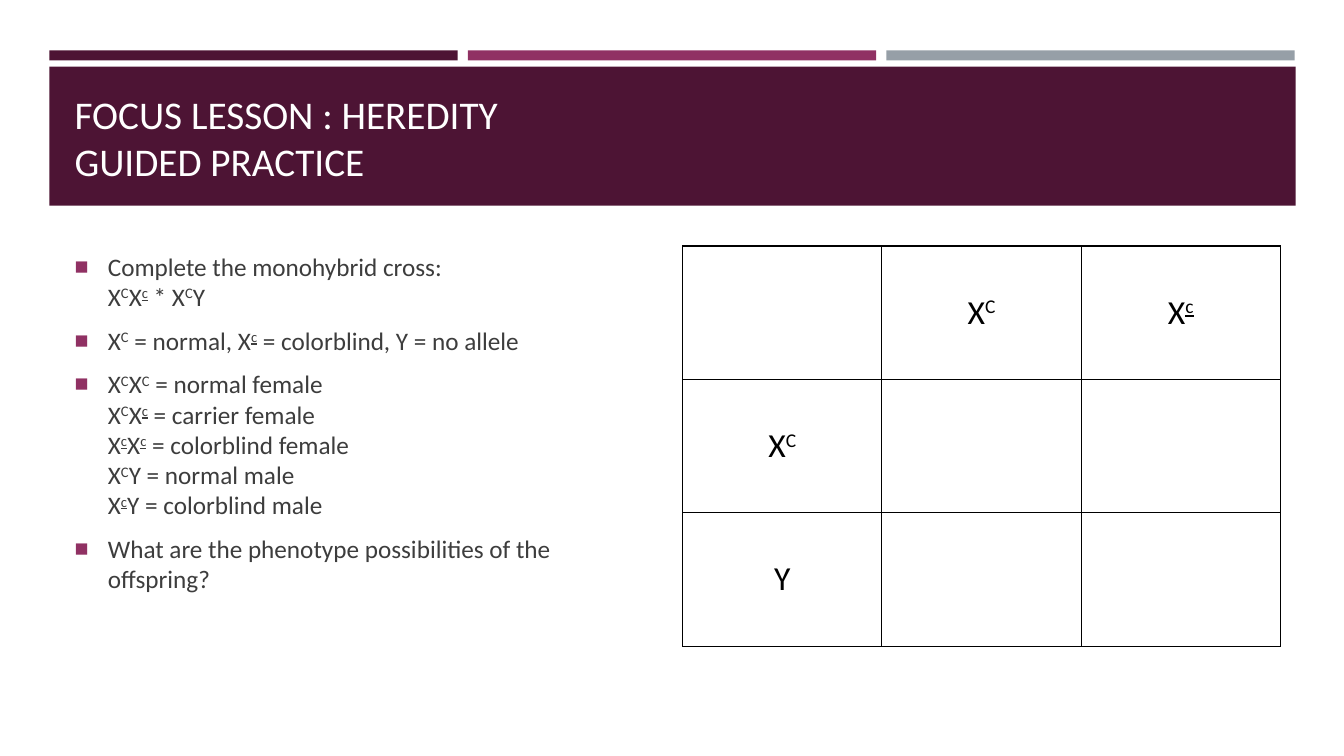
from typing import NamedTuple

from lxml.etree import SubElement
from pptx import Presentation
from pptx.dml.color import RGBColor
from pptx.enum.shapes import MSO_SHAPE
from pptx.enum.text import MSO_ANCHOR, MSO_AUTO_SIZE, PP_ALIGN
from pptx.oxml.ns import qn
from pptx.util import Inches, Pt

FONT = "Calibri"
PLUM, MAGENTA, GREY = "4D1434", "903163", "969FA7"
WHITE, BLACK, TEXT = "FFFFFF", "000000", "3D3D3D"


class Bar(NamedTuple):
    left: float
    top: float
    width: float
    height: float
    color: str


BARS = [Bar(0.49 + 4.15 * i, 0.5, 4.05, 0.1, color)
        for i, color in enumerate((PLUM, MAGENTA, GREY))]
BARS.append(Bar(0.49, 0.66, 12.36, 1.38, PLUM))

# "^" raises the next letter; a raised lower-case c is underlined.
BULLETS = [
    "Complete the monohybrid cross:\nX^CX^c * X^CY",
    "X^C = normal, X^c = colorblind, Y = no allele",
    "X^CX^C = normal female\nX^CX^c = carrier female\n"
    "X^cX^c = colorblind female\nX^CY = normal male\nX^cY = colorblind male",
    "What are the phenotype possibilities of the offspring?",
]
PUNNETT = [["", "X^C", "X^c"], ["X^C", "", ""], ["Y", "", ""]]


def rgb(color: str) -> RGBColor:
    return RGBColor.from_string(color)


def add_text(p, text: str, *, size: float, color: str, align=PP_ALIGN.LEFT) -> None:
    """Fill a paragraph, turning ^ into superscript and newlines into breaks."""

    def add_run(part: str, raised: bool = False) -> None:
        if not part:
            return
        r = p.add_run()
        r.text = part
        r.font.name, r.font.size = FONT, Pt(size)
        r.font.color.rgb = rgb(color)
        if raised:
            r.font.underline = part == "c" or None
            r.font._element.set("baseline", "30000")

    p.alignment = align
    for i, line in enumerate(text.split("\n")):
        if i:
            p.add_line_break()
        plain, *raised_parts = line.split("^")
        add_run(plain)
        for part in raised_parts:
            add_run(part[0], raised=True)
            add_run(part[1:])
    for br in p._p.findall(qn("a:br")):
        SubElement(br, qn("a:rPr"), sz=str(size * 100))


def add_bullet(p) -> None:
    p.space_after = Pt(6)
    pPr = p._p.get_or_add_pPr()
    pPr.set("marL", str(Inches(0.33)))
    pPr.set("indent", str(Inches(-0.33)))
    SubElement(SubElement(pPr, qn("a:buClr")), qn("a:srgbClr"), val=MAGENTA)
    SubElement(pPr, qn("a:buSzPct"), val="92000")
    SubElement(pPr, qn("a:buFont"), typeface="Arial")
    SubElement(pPr, qn("a:buChar"), char="■")


def add_borders(cell) -> None:
    tcPr = cell._tc.get_or_add_tcPr()
    for side in ("lnL", "lnR", "lnT", "lnB"):
        ln = SubElement(tcPr, qn(f"a:{side}"), w=str(Pt(1)))
        SubElement(SubElement(ln, qn("a:solidFill")), qn("a:srgbClr"), val=BLACK)


def add_bar(slide, bar: Bar) -> None:
    sp = slide.shapes.add_shape(MSO_SHAPE.RECTANGLE, *map(Inches, bar[:4]))
    sp.shadow.inherit = False
    sp.fill.solid()
    sp.fill.fore_color.rgb = rgb(bar.color)
    sp.line.fill.background()
    # Bars lie behind the placeholders.
    slide.shapes._spTree.remove(sp._element)
    slide.shapes._spTree.insert(2, sp._element)


def place(sp, left: float, top: float, width: float, height: float, anchor):
    """Move a placeholder and return its text frame."""
    sp.left, sp.top = Inches(left), Inches(top)
    sp.width, sp.height = Inches(width), Inches(height)
    tf = sp.text_frame
    tf.word_wrap = True
    tf.auto_size = MSO_AUTO_SIZE.NONE
    tf.vertical_anchor = anchor
    return tf


def add_punnett(slide) -> None:
    box = map(Inches, (6.77, 2.44, 5.93, 3.97))
    table = slide.shapes.add_table(len(PUNNETT), len(PUNNETT[0]), *box).table
    table.first_row = table.horz_banding = False
    for i, row in enumerate(PUNNETT):
        for j, text in enumerate(row):
            cell = table.cell(i, j)
            add_borders(cell)
            cell.fill.background()
            cell.vertical_anchor = MSO_ANCHOR.MIDDLE
            if text:
                add_text(cell.text_frame.paragraphs[0], text, size=24,
                         color=BLACK, align=PP_ALIGN.CENTER)


def main() -> None:
    prs = Presentation()
    prs.slide_width, prs.slide_height = Inches(13.33), Inches(7.5)
    slide = prs.slides.add_slide(prs.slide_layouts[1])
    title, body = slide.placeholders
    for bar in reversed(BARS):
        add_bar(slide, bar)

    tf = place(title, 0.64, 0.8, 12.06, 1.08, MSO_ANCHOR.BOTTOM)
    add_text(tf.paragraphs[0], "FOCUS LESSON : HEREDITY\nGUIDED PRACTICE",
             size=28, color=WHITE)

    tf = place(body, 0.64, 2.44, 5.93, 3.97, MSO_ANCHOR.TOP)
    for i, text in enumerate(BULLETS):
        p = tf.add_paragraph() if i else tf.paragraphs[0]
        add_text(p, text, size=18, color=TEXT)
        add_bullet(p)

    add_punnett(slide)
    prs.save("out.pptx")


if __name__ == "__main__":
    main()
